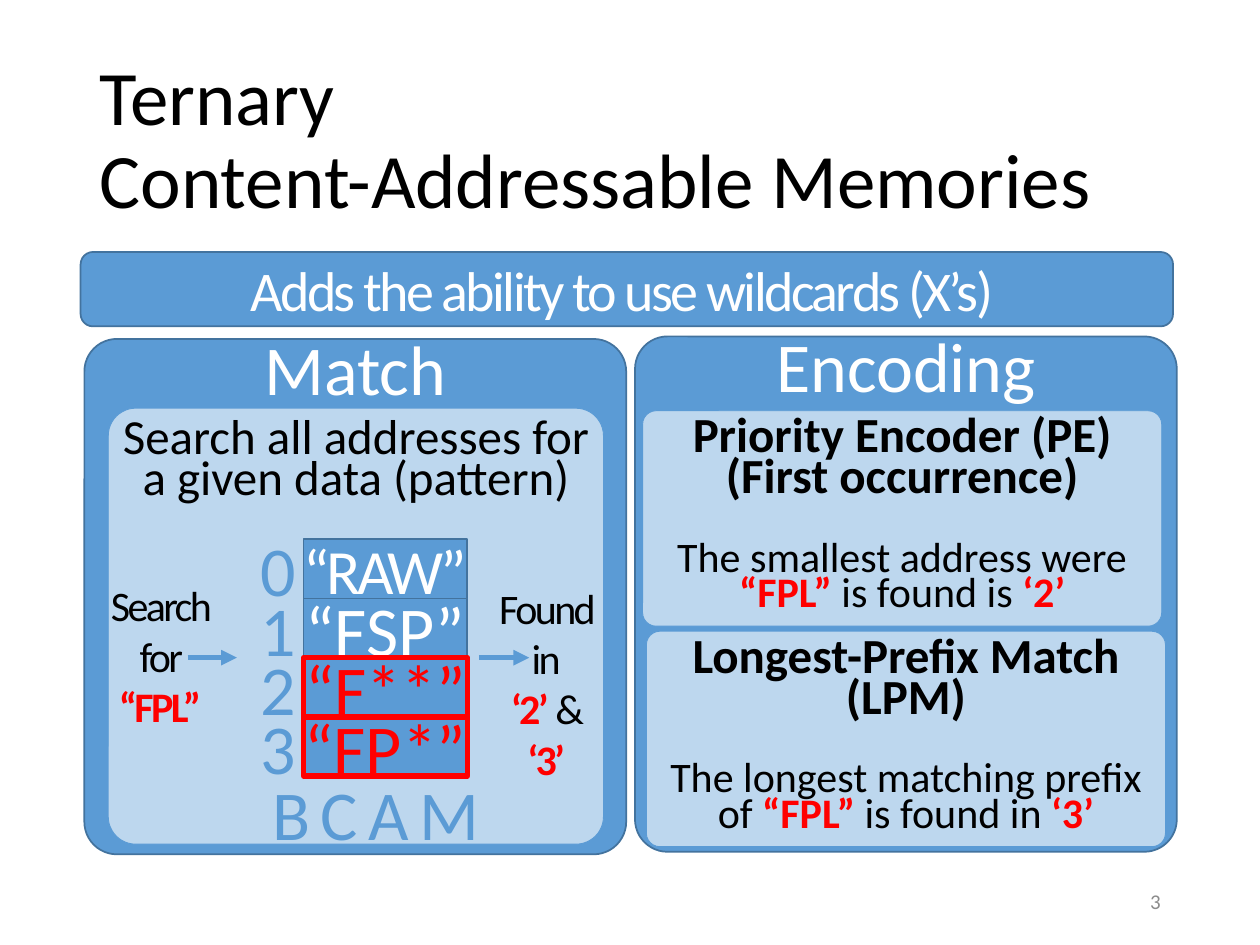
"""Build the slide on ternary content-addressable memories."""
from dataclasses import dataclass, replace

import pptx
import pptx.dml.color
import pptx.enum.shapes
import pptx.enum.text
import pptx.util
from lxml import etree

RGBColor = pptx.dml.color.RGBColor
Inches = pptx.util.Inches
Pt = pptx.util.Pt
MSO_SHAPE = pptx.enum.shapes.MSO_SHAPE
ANCHOR = pptx.enum.text.MSO_ANCHOR
ALIGN = pptx.enum.text.PP_ALIGN

BLUE = RGBColor(0x5B, 0x9B, 0xD5)
EDGE = RGBColor(0x43, 0x73, 0x9E)
PALE = RGBColor(0xBD, 0xD7, 0xEE)
RED = RGBColor(0xFF, 0x00, 0x00)
BLACK = RGBColor(0x00, 0x00, 0x00)
WHITE = RGBColor(0xFF, 0xFF, 0xFF)
GRAY = RGBColor(0x8C, 0x8C, 0x8C)
FONT = "Calibri"
DRAWING_NS = "http://schemas.openxmlformats.org/drawingml/2006/main"
ROW_TOP, ROW_HEIGHT = 4.28, 0.47


@dataclass(frozen=True)
class Run:
    text: str
    size: float
    color: RGBColor = BLACK
    bold: bool = False
    spacing: float = 0


@dataclass(frozen=True)
class Para:
    runs: tuple[Run, ...]
    before: float = 0


@dataclass(frozen=True)
class Box:
    left: float
    top: float
    width: float
    height: float
    paras: tuple[Para, ...]
    shape: MSO_SHAPE | None = None
    fill: RGBColor = BLUE
    line: RGBColor = EDGE
    line_width: float = 1
    corner: float | None = None
    margins: tuple[float, float, float, float] = (0, 0, 0, 0)
    anchor: ANCHOR = ANCHOR.TOP
    align: ALIGN = ALIGN.CENTER
    line_spacing: float = 1


def para(*runs: Run, before: float = 0) -> Para:
    return Para(runs, before)


def add_run(p, run: Run) -> None:
    r = p.add_run()
    r.text = run.text
    r.font.name = FONT
    r.font.size = Pt(run.size)
    r.font.bold = run.bold
    r.font.color.rgb = run.color
    if run.spacing:
        r.font._element.set("spc", str(int(run.spacing * 100)))


def add_box(s, box: Box) -> None:
    place = [Inches(v) for v in (box.left, box.top, box.width, box.height)]
    if box.shape is None:
        sp = s.shapes.add_textbox(*place)
    else:
        sp = s.shapes.add_shape(box.shape, *place)
        sp.shadow.inherit = False
        sp.fill.solid()
        sp.fill.fore_color.rgb = box.fill
        sp.line.color.rgb = box.line
        sp.line.width = Pt(box.line_width)
        if box.corner is not None:
            sp.adjustments[0] = box.corner
    tf = sp.text_frame
    tf.word_wrap = True
    tf.vertical_anchor = box.anchor
    tf.margin_left, tf.margin_top, tf.margin_right, tf.margin_bottom = (
        Inches(m) for m in box.margins)
    for i, item in enumerate(box.paras):
        p = tf.add_paragraph() if i else tf.paragraphs[0]
        p.alignment = box.align
        p.line_spacing = box.line_spacing
        p.space_before = Pt(item.before)
        for run in item.runs:
            add_run(p, run)


def add_arrow(s, left: float, right: float, y: float) -> None:
    line = s.shapes.add_connector(
        pptx.enum.shapes.MSO_CONNECTOR.STRAIGHT,
        Inches(left), Inches(y), Inches(right), Inches(y))
    line.line.color.rgb = BLUE
    line.line.width = Pt(3)
    ln = line.line._get_or_add_ln()
    etree.SubElement(ln, f"{{{DRAWING_NS}}}tailEnd", type="triangle")
    etree.SubElement(line._element.spPr, f"{{{DRAWING_NS}}}effectLst")


def add_title(s, lines: tuple[str, ...]) -> None:
    sp = s.shapes.title
    sp.left, sp.top, sp.width, sp.height = (
        Inches(v) for v in (0.69, 0.4, 8.62, 1.45))
    tf = sp.text_frame
    tf.auto_size = pptx.enum.text.MSO_AUTO_SIZE.NONE
    tf.vertical_anchor = ANCHOR.MIDDLE
    p = tf.paragraphs[0]
    p.alignment = ALIGN.LEFT
    p.line_spacing = 0.9
    for i, text in enumerate(lines):
        if i:
            p.add_line_break()
        add_run(p, Run(text, 44))


def panel(left: float, top: float, heading: str) -> Box:
    return Box(left, top, 4.3, 4.09, (para(Run(heading, 40, WHITE)),),
               MSO_SHAPE.ROUNDED_RECTANGLE, corner=0.063, line_spacing=0.7)


def card(left: float, top: float, width: float, height: float,
         *paras: Para) -> Box:
    return replace(panel(left, top, ""), width=width, height=height,
                   paras=paras, fill=PALE, line=BLUE, line_width=0.5,
                   margins=(0, 0.04, 0, 0))


def add_memory(s, words: tuple[Run, ...]) -> None:
    for i, word in enumerate(words):
        top = ROW_TOP + i * ROW_HEIGHT
        hit = word.color == RED
        cell = Box(2.41, top, 1.3, ROW_HEIGHT, (para(word),),
                   MSO_SHAPE.RECTANGLE, line=RED if hit else EDGE,
                   line_width=3 if hit else 1, anchor=ANCHOR.MIDDLE)
        add_box(s, cell)
        add_box(s, Box(2.01, top, 0.39, ROW_HEIGHT,
                       (para(Run(str(i), 40, BLUE)),), anchor=ANCHOR.MIDDLE))


def main() -> None:
    prs = pptx.Presentation()
    prs.slide_width, prs.slide_height = Inches(10), Inches(7.5)
    s = prs.slides.add_slide(prs.slide_layouts[5])
    add_title(s, ("Ternary", "Content-Addressable Memories"))

    tight = Run("", 24, spacing=-1.5)
    tight_key = replace(tight, color=RED, bold=True)
    body = Run("", 24)
    key = replace(body, color=RED, bold=True)
    banner = Run("Adds the ability to use wildcards (X’s) ", 32, WHITE,
                 spacing=-1.5)

    add_box(s, Box(0.64, 2, 8.67, 0.59, (para(banner),),
                   MSO_SHAPE.ROUNDED_RECTANGLE,
                   margins=(0.1, 0.05, 0.1, 0.05), anchor=ANCHOR.MIDDLE))
    add_box(s, panel(0.67, 2.69, "Match"))
    add_box(s, card(0.86, 3.24, 3.93, 3.46, para(
        Run("Search all addresses for a given data (pattern)", 28))))
    add_arrow(s, 3.8, 4.2, 5.22)
    add_box(s, Box(3.88, 4.62, 0.91, 1.21, (
        para(replace(tight, text="Found in")),
        para(replace(tight_key, text="‘2’"), replace(tight, text=" & "),
             replace(tight_key, text="‘3’")))))
    add_memory(s, (Run("“RAW”", 36, WHITE, spacing=-2),
                   Run("“FSP”", 40, WHITE),
                   Run("“F**”", 40, RED),
                   Run("“FP*”", 40, RED)))
    add_box(s, Box(2, 6.17, 1.97, 0.47,
                   (para(Run("BCAM", 40, BLUE, spacing=6)),),
                   margins=(0, 0.2, 0, 0.12), anchor=ANCHOR.MIDDLE))
    add_arrow(s, 1.49, 1.88, 5.22)
    add_box(s, Box(0.8, 4.6, 0.94, 1.21, (
        para(replace(tight, text="Search for "),
             replace(tight_key, text="“FPL”")),)))

    add_box(s, panel(5.04, 2.67, "Encoding"))
    add_box(s, card(
        5.1, 3.26, 4.12, 1.71,
        para(Run("Priority Encoder (PE)", 28, bold=True)),
        para(Run("(First occurrence)", 28, bold=True)),
        para(replace(body, text="The smallest address were "),
             replace(key, text="“FPL”"), replace(body, text=" is found is "),
             replace(key, text="‘2’"), before=24)))
    add_box(s, card(
        5.13, 5.01, 4.12, 1.71,
        para(Run("Longest-Prefix Match (LPM)", 28, bold=True)),
        para(replace(body, text="The longest matching prefix of "),
             replace(key, text="“FPL” "), replace(body, text="is found in "),
             replace(key, text="‘3’"), before=24)))
    add_box(s, Box(7.06, 6.95, 2.25, 0.4, (para(Run("3", 12, GRAY)),),
                   margins=(0.1, 0.05, 0.1, 0.05), anchor=ANCHOR.MIDDLE,
                   align=ALIGN.RIGHT))
    prs.save("out.pptx")


if __name__ == "__main__":
    main()
